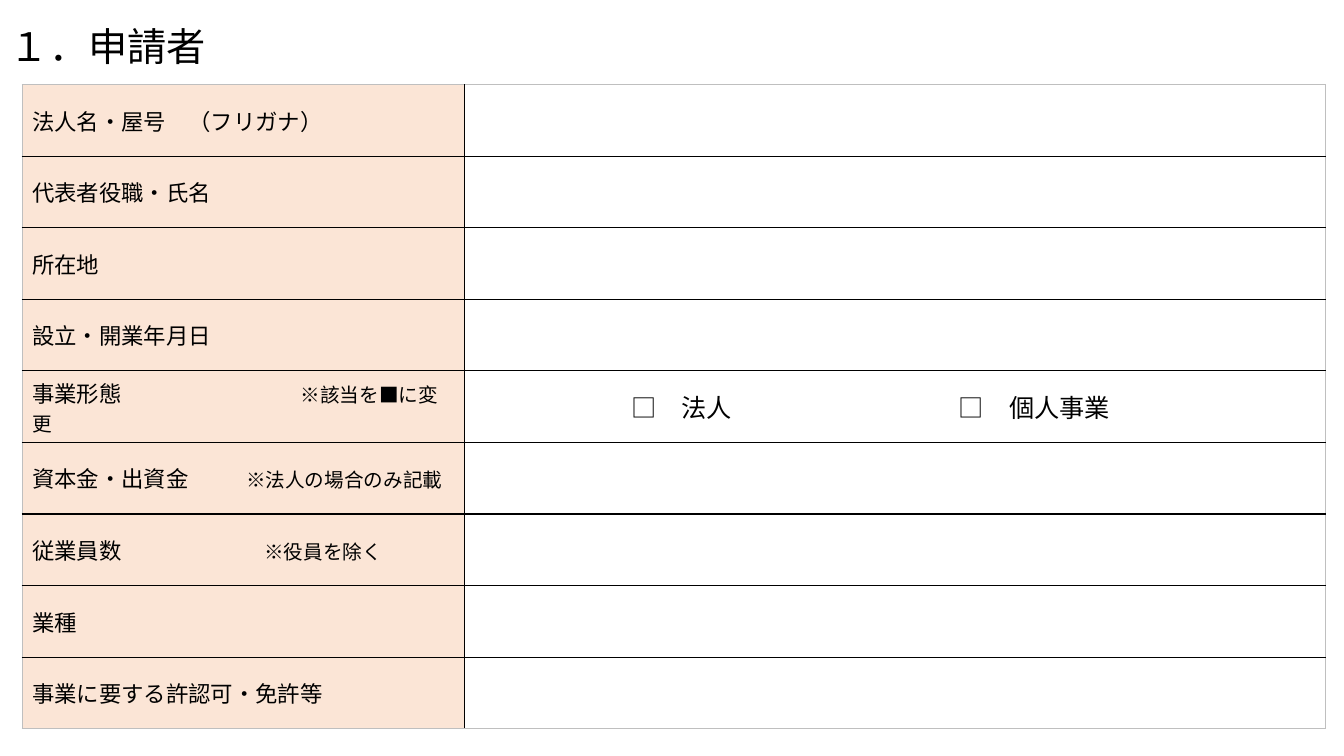
from lxml import etree
from pptx import Presentation
from pptx.dml.color import RGBColor
from pptx.enum.text import MSO_ANCHOR
from pptx.oxml.ns import qn
from pptx.util import Inches, Pt

MIDDLE = MSO_ANCHOR.MIDDLE
BLACK = RGBColor(0x00, 0x00, 0x00)
GRAY = RGBColor(0xBF, 0xBF, 0xBF)
PEACH = RGBColor(0xFB, 0xE5, 0xD6)
FONT = "Noto Sans CJK JP"

COLUMN_WIDTHS = (4.39, 8.54)
ROW_HEIGHT = 0.71

# Label, note, and distance of the note from the left of the label
FIELDS = [
    ("法人名・屋号　（フリガナ）", None, None),
    ("代表者役職・氏名", None, None),
    ("所在地", None, None),
    ("設立・開業年月日", None, None),
    ("事業形態", "※該当を■に変更", 2.66),
    ("資本金・出資金", "※法人の場合のみ記載", 2.12),
    ("従業員数", "※役員を除く", 2.3),
    ("業種", None, None),
    ("事業に要する許認可・免許等", None, None),
]
BUSINESS_FORM_ROW = 4
BUSINESS_FORMS = "□　法人\t□　個人事業"


class FormSlide:
    """Holds the form style and the slide being filled."""

    def __init__(self, presentation):
        self.slide = presentation.slides.add_slide(presentation.slide_layouts[6])

    def format_run(self, run, size):
        run.font.size = Pt(size)
        run.font.color.rgb = BLACK
        run.font.name = FONT
        properties = run.font._element
        etree.SubElement(properties, qn("a:ea"), typeface=FONT)

    def add_text(self, paragraph, text, size):
        run = paragraph.add_run()
        run.text = text
        self.format_run(run, size)

    def add_tab_stop(self, paragraph, position):
        properties = paragraph._p.get_or_add_pPr()
        tabs = etree.SubElement(properties, qn("a:tabLst"))
        etree.SubElement(tabs, qn("a:tab"), pos=str(Inches(position)), algn="l")

    def add_title(self, text, left, top, width, height):
        box = self.slide.shapes.add_textbox(
            Inches(left), Inches(top), Inches(width), Inches(height))
        frame = box.text_frame
        frame.word_wrap = True
        frame.vertical_anchor = MIDDLE
        paragraph = frame.paragraphs[0]
        paragraph.line_spacing = 0.9
        self.add_text(paragraph, text, 28)

    def set_borders(self, cell, colors):
        properties = cell._tc.get_or_add_tcPr()
        for index, (side, color) in enumerate(colors.items()):
            line = etree.Element(qn(f"a:ln{side}"), w=str(Pt(1)))
            fill = etree.SubElement(line, qn("a:solidFill"))
            etree.SubElement(fill, qn("a:srgbClr"), val=str(color))
            properties.insert(index, line)

    def add_form_table(self, left, top):
        row_count, column_count = len(FIELDS), len(COLUMN_WIDTHS)
        table = self.slide.shapes.add_table(
            row_count, column_count, Inches(left), Inches(top),
            Inches(sum(COLUMN_WIDTHS)), Inches(ROW_HEIGHT * row_count)).table
        table.first_row = False
        table.horz_banding = False
        for column, width in zip(table.columns, COLUMN_WIDTHS):
            column.width = Inches(width)
        for row_index, row in enumerate(table.rows):
            row.height = Inches(ROW_HEIGHT)
            for column_index, cell in enumerate(row.cells):
                cell.vertical_anchor = MIDDLE
                if column_index == 0:
                    cell.fill.solid()
                    cell.fill.fore_color.rgb = PEACH
                else:
                    cell.fill.background()
                # Gray around the table, black between cells
                self.set_borders(cell, {
                    "L": GRAY if column_index == 0 else BLACK,
                    "R": GRAY if column_index == column_count - 1 else BLACK,
                    "T": GRAY if row_index == 0 else BLACK,
                    "B": GRAY if row_index == row_count - 1 else BLACK,
                })
        return table

    def fill_label(self, cell, label, note, note_position):
        paragraph = cell.text_frame.paragraphs[0]
        self.add_text(paragraph, label, 16)
        if note:
            self.add_tab_stop(paragraph, note_position)
            self.add_text(paragraph, "\t" + note, 14)

    def fill_choices(self, cell, text, indent, tab_position):
        cell.margin_left = Inches(indent)
        paragraph = cell.text_frame.paragraphs[0]
        self.add_tab_stop(paragraph, tab_position)
        self.add_text(paragraph, text, 18)


def main():
    presentation = Presentation()
    presentation.slide_width = Inches(13.33)
    presentation.slide_height = Inches(7.5)
    form = FormSlide(presentation)

    # Heading
    form.add_title("１．申請者", 0, -0.01, 11.5, 0.99)

    # Applicant table
    table = form.add_form_table(0.22, 0.84)
    for row_index, field in enumerate(FIELDS):
        form.fill_label(table.cell(row_index, 0), *field)
    form.fill_choices(table.cell(BUSINESS_FORM_ROW, 1), BUSINESS_FORMS, 1.65, 3.25)

    presentation.save("out.pptx")


if __name__ == "__main__":
    main()
